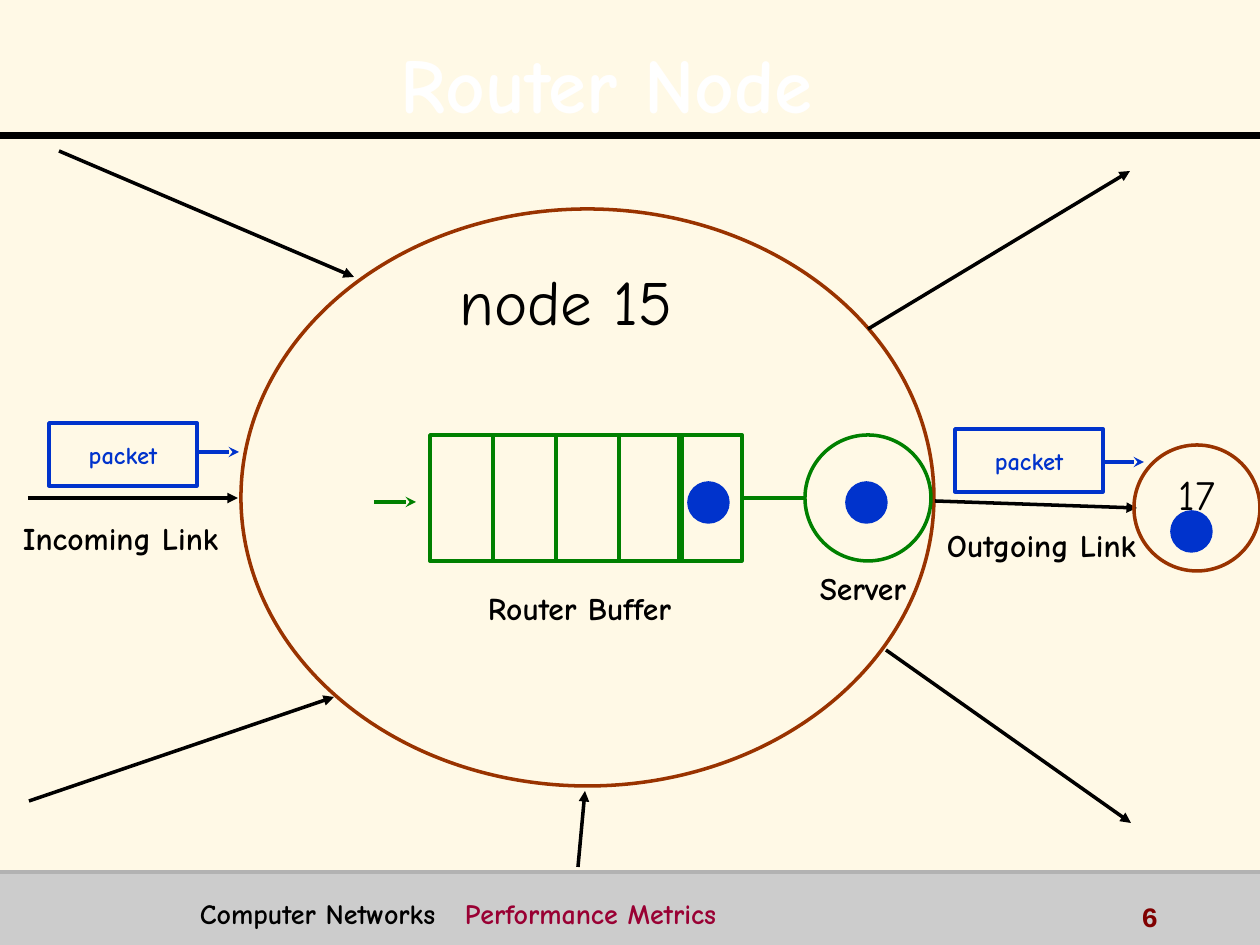
from typing import NamedTuple

from lxml import etree
from pptx import Presentation
from pptx import util as u
from pptx.dml.color import RGBColor
from pptx.enum import shapes, text
from pptx.oxml import ns

EMU_PER_PX = 914400 / 126
FONT = "Comic Neue"
COLORS = {
    "cream": "FFF9E6", "black": "000000", "white": "FFFFFF",
    "gray": "CCCCCC", "rule": "B2B2B2", "brown": "993300",
    "green": "008000", "blue": "0033CC", "maroon": "800000", "crimson": "990033",
}
RECT = shapes.MSO_SHAPE.RECTANGLE
OVAL = shapes.MSO_SHAPE.OVAL


class Box(NamedTuple):
    left: int
    top: int
    width: int
    height: int


class Line(NamedTuple):
    x1: int
    y1: int
    x2: int
    y2: int
    color: str = "black"
    head: str = ""
    weight: int = 2


class Label(NamedTuple):
    words: str
    box: Box
    size: int = 18
    bold: bool = True


LINK_LINES = [
    Line(935, 501, 1137, 508, head="triangle"),
    Line(868, 329, 1130, 171, head="triangle"),
    Line(886, 650, 1131, 823, head="triangle"),
    Line(28, 498, 238, 498, head="triangle"),
    Line(59, 151, 354, 277, head="triangle"),
    Line(29, 801, 334, 697, head="triangle"),
    Line(578, 867, 585, 791, head="triangle"),
]
FLOW_LINES = [
    Line(742, 498, 805, 498, "green"),
    Line(374, 502, 416, 502, "green", "stealth"),
    Line(197, 452, 239, 452, "blue", "stealth"),
    Line(1103, 462, 1144, 462, "blue", "stealth"),
]
LABELS = [
    Label("node 15", Box(439, 236, 254, 128), 36, False),
    Label("Outgoing Link", Box(931, 518, 221, 53)),
    Label("Router Buffer", Box(469, 581, 221, 53)),
    Label("Server", Box(795, 561, 136, 53)),
    Label("Incoming Link", Box(10, 511, 221, 53)),
]
CELL = 63
BUFFER_LEFT, BUFFER_TOP = 430, 435
BUFFER_CELLS = [BUFFER_LEFT + CELL * i for i in range(4)] + [679]
TOKENS = [(689, 483), (847, 483), (1172, 512)]


def px(value: int) -> u.Emu:
    return u.Emu(round(value * EMU_PER_PX))


def rgb(name: str) -> RGBColor:
    return RGBColor.from_string(COLORS[name])


def place(box: Box) -> list[u.Emu]:
    return [px(value) for value in box]


def style(paragraph, size: int, color: str = "black", bold: bool = True, name: str = FONT) -> None:
    font = paragraph.font
    font.size, font.bold, font.name = u.Pt(size), bold, name
    font.color.rgb = rgb(color)


def draw_shape(slide, kind, box: Box, line: str = "", fill: str = ""):
    shape = slide.shapes.add_shape(kind, *place(box))
    shape.shadow.inherit = False
    if fill:
        shape.fill.solid()
        shape.fill.fore_color.rgb = rgb(fill)
    else:
        shape.fill.background()
    if line:
        shape.line.color.rgb = rgb(line)
        shape.line.width = u.Pt(2)
    else:
        shape.line.fill.background()
    return shape


def draw_line(slide, line: Line) -> None:
    connector = slide.shapes.add_connector(
        shapes.MSO_CONNECTOR.STRAIGHT, px(line.x1), px(line.y1), px(line.x2), px(line.y2))
    connector.line.color.rgb = rgb(line.color)
    connector.line.width = u.Pt(line.weight)
    if line.head:
        outline = connector.line._get_or_add_ln()
        etree.SubElement(outline, ns.qn("a:tailEnd"), type=line.head)
    etree.SubElement(connector._element.spPr, ns.qn("a:effectLst"))


def center_text(shape, words: str, size: int, color: str = "black", bold: bool = True) -> None:
    frame = shape.text_frame
    frame.word_wrap = False
    frame.vertical_anchor = text.MSO_ANCHOR.MIDDLE
    paragraph = frame.paragraphs[0]
    paragraph.text = words
    paragraph.alignment = text.PP_ALIGN.CENTER
    style(paragraph, size, color, bold)


def draw_label(slide, label: Label) -> None:
    box = slide.shapes.add_textbox(*place(label.box))
    center_text(box, label.words, label.size, bold=label.bold)


def draw_packet(slide, left: int, top: int) -> None:
    packet = draw_shape(slide, RECT, Box(left, top, 148, 63), "blue")
    center_text(packet, "packet", 14, "blue")


def draw_title(slide) -> None:
    title = slide.shapes.title
    title.left, title.top, title.width, title.height = place(Box(84, 10, 1071, 136))
    frame = title.text_frame
    center_text(title, "Router Node", 44, "white")
    frame.word_wrap = True
    frame.auto_size = text.MSO_AUTO_SIZE.NONE
    frame.margin_right = px(38)
    paragraph = frame.paragraphs[0]
    paragraph.line_spacing = 1.1
    properties = paragraph.runs[0]._r.get_or_add_rPr()
    effects = etree.SubElement(properties, ns.qn("a:effectLst"))
    shadow = etree.SubElement(effects, ns.qn("a:outerShdw"), dist="35921", dir="2700000")
    etree.SubElement(shadow, ns.qn("a:srgbClr"), val=COLORS["black"])


def draw_footer(slide) -> None:
    draw_shape(slide, RECT, Box(0, 872, 1260, 73), fill="gray")
    draw_line(slide, Line(0, 872, 1260, 872, "rule"))

    frame = slide.shapes.add_textbox(*place(Box(178, 890, 917, 39))).text_frame
    frame.word_wrap = True
    frame.margin_left = px(22)
    paragraph = frame.paragraphs[0]
    tabs = etree.SubElement(paragraph._p.get_or_add_pPr(), ns.qn("a:tabLst"))
    etree.SubElement(tabs, ns.qn("a:tab"), pos=str(px(265)), algn="l")
    style(paragraph, 16)
    paragraph.add_run().text = "Computer Networks\t"
    topic = paragraph.add_run()
    topic.text = "Performance Metrics"
    topic.font.color.rgb = rgb("crimson")

    number = slide.shapes.add_textbox(*place(Box(1129, 893, 126, 32))).text_frame
    number.word_wrap = True
    number.text = "6"
    style(number.paragraphs[0], 16, "maroon", name="Courier New")


def main() -> None:
    presentation = Presentation()
    presentation.slide_width, presentation.slide_height = px(1260), px(945)
    slide = presentation.slides.add_slide(presentation.slide_layouts[5])
    slide.background.fill.solid()
    slide.background.fill.fore_color.rgb = rgb("cream")

    draw_title(slide)
    draw_line(slide, Line(0, 136, 1260, 136, weight=4))
    draw_footer(slide)

    draw_shape(slide, OVAL, Box(241, 209, 693, 577), "brown")
    for line in LINK_LINES:
        draw_line(slide, line)
    for left in BUFFER_CELLS:
        draw_shape(slide, RECT, Box(left, BUFFER_TOP, CELL, 2 * CELL), "green")
    draw_shape(slide, OVAL, Box(805, BUFFER_TOP, 126, 126), "green")
    next_node = draw_shape(slide, OVAL, Box(1134, 445, 126, 126), "brown")
    center_text(next_node, "17", 24, bold=False)
    next_node.text_frame.margin_bottom = px(34)
    draw_packet(slide, 49, 423)
    draw_packet(slide, 955, 429)
    for line in FLOW_LINES:
        draw_line(slide, line)
    for label in LABELS:
        draw_label(slide, label)
    for left, top in TOKENS:
        draw_shape(slide, OVAL, Box(left, top, 39, 39), "blue", "blue")

    presentation.save("out.pptx")


if __name__ == "__main__":
    main()
